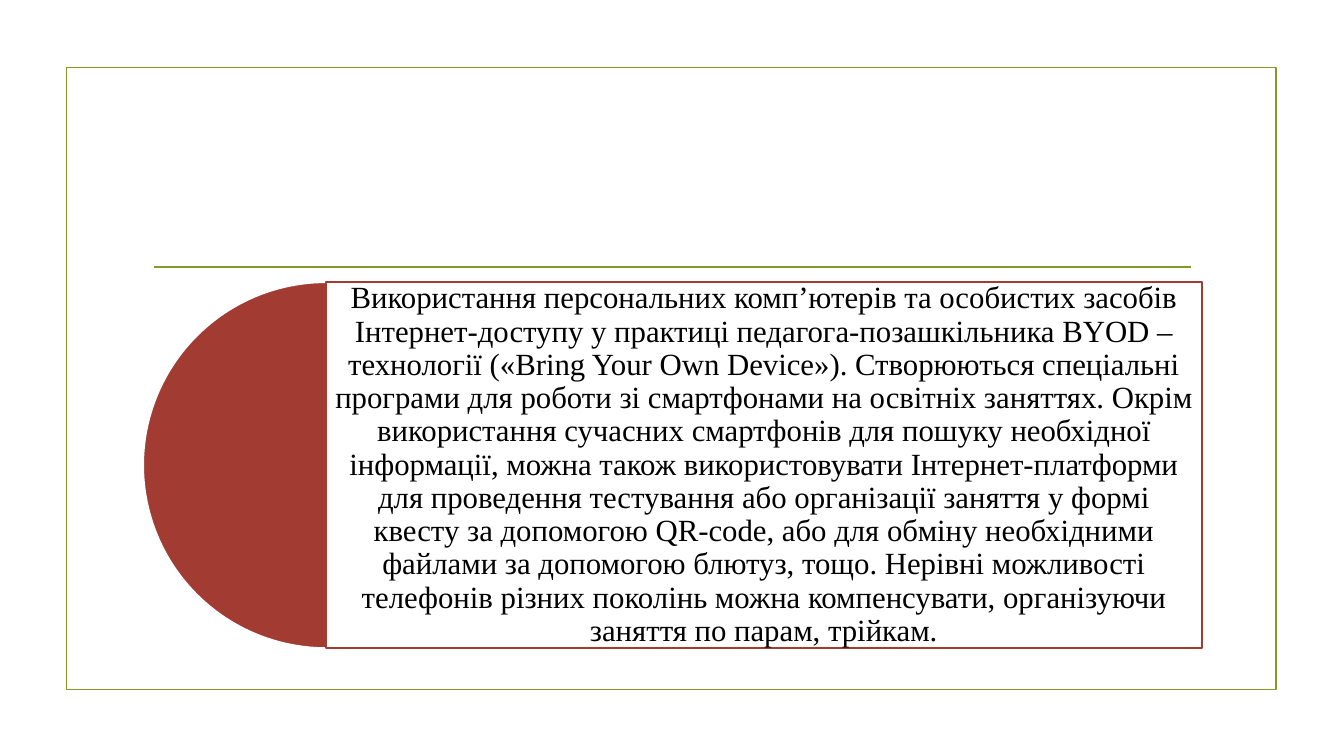
from dataclasses import dataclass

from lxml import etree
from pptx import Presentation
from pptx import util as u
from pptx.dml.color import RGBColor
from pptx.enum import shapes, text
from pptx.oxml.ns import qn

PX = 9144  # EMU; 100 px to the inch
OLIVE, BRICK, WHITE, BLACK = "83992A", "A23C33", "FFFFFF", "000000"
LINE_WIDTH = u.Pt(1.25)
BYOD_TEXT = (
    "Використання персональних комп’ютерів та особистих засобів "
    "Інтернет-доступу у практиці педагога-позашкільника BYOD –технології "
    "(«Bring Your Own Device»). Створюються спеціальні програми для роботи зі "
    "смартфонами на освітніх заняттях. Окрім використання сучасних смартфонів "
    "для пошуку необхідної інформації, можна також використовувати "
    "Інтернет-платформи для проведення тестування або організації заняття у "
    "формі квесту за допомогою QR-code, або для обміну необхідними файлами за "
    "допомогою блютуз, тощо. Нерівні можливості телефонів різних поколінь "
    "можна компенсувати, організуючи заняття по парам, трійкам."
)


@dataclass(frozen=True)
class Panel:
    kind: shapes.MSO_SHAPE
    left: int
    top: int
    width: int
    height: int
    line: str
    fill: str | None = None


FRAME = Panel(shapes.MSO_SHAPE.RECTANGLE, 66, 67, 1200, 617, OLIVE)
HALF_DISC = Panel(shapes.MSO_SHAPE.PIE, 142, 280, 363, 363, WHITE, BRICK)
BYOD_BOX = Panel(shapes.MSO_SHAPE.RECTANGLE, 323, 280, 869, 363, BRICK, WHITE)


def px(length: int) -> u.Emu:
    return u.Emu(length * PX)


def rgb(colour: str) -> RGBColor:
    return RGBColor.from_string(colour)


def add_panel(slide, panel: Panel):
    shape = slide.shapes.add_shape(
        panel.kind, px(panel.left), px(panel.top), px(panel.width), px(panel.height)
    )
    shape.shadow.inherit = False
    shape.line.color.rgb = rgb(panel.line)
    shape.line.width = LINE_WIDTH
    if panel.fill:
        shape.fill.solid()
        shape.fill.fore_color.rgb = rgb(panel.fill)
    else:
        shape.fill.background()
    return shape


def add_title_rule(slide, left: int, right: int, y: int) -> None:
    rule = slide.shapes.add_connector(
        shapes.MSO_CONNECTOR.STRAIGHT, px(left), px(y), px(right), px(y)
    )
    rule.line.color.rgb = rgb(OLIVE)
    rule.line.width = LINE_WIDTH
    etree.SubElement(rule._element.spPr, qn("a:effectLst"))


def set_opacity(shape, percent: int) -> None:
    fill_colour = shape._element.spPr.find(qn("a:solidFill"))[0]
    etree.SubElement(fill_colour, qn("a:alpha"), val=str(percent * 1000))


def write_text(shape, wording: str) -> None:
    frame = shape.text_frame
    frame.word_wrap = True
    frame.vertical_anchor = text.MSO_ANCHOR.MIDDLE
    frame.margin_left = frame.margin_right = px(9)
    frame.margin_top = frame.margin_bottom = px(9)
    paragraph = frame.paragraphs[0]
    paragraph.text = wording
    paragraph.alignment = text.PP_ALIGN.CENTER
    paragraph.line_spacing = 0.9
    paragraph.font.name = "Times New Roman"
    paragraph.font.size = u.Pt(22)
    paragraph.font.color.rgb = rgb(BLACK)


def main() -> None:
    deck = Presentation()
    deck.slide_width, deck.slide_height = px(1333), px(750)
    slide = deck.slides.add_slide(deck.slide_layouts[6])

    add_panel(slide, FRAME)
    add_title_rule(slide, left=153, right=1181, y=265)

    half_disc = add_panel(slide, HALF_DISC)
    # Angles from 90° to 270°, in units of 100000 sixty-thousandths of a degree
    half_disc.adjustments[0] = 54
    half_disc.adjustments[1] = 162

    byod_box = add_panel(slide, BYOD_BOX)
    set_opacity(byod_box, 90)
    write_text(byod_box, BYOD_TEXT)

    deck.save("out.pptx")


if __name__ == "__main__":
    main()
